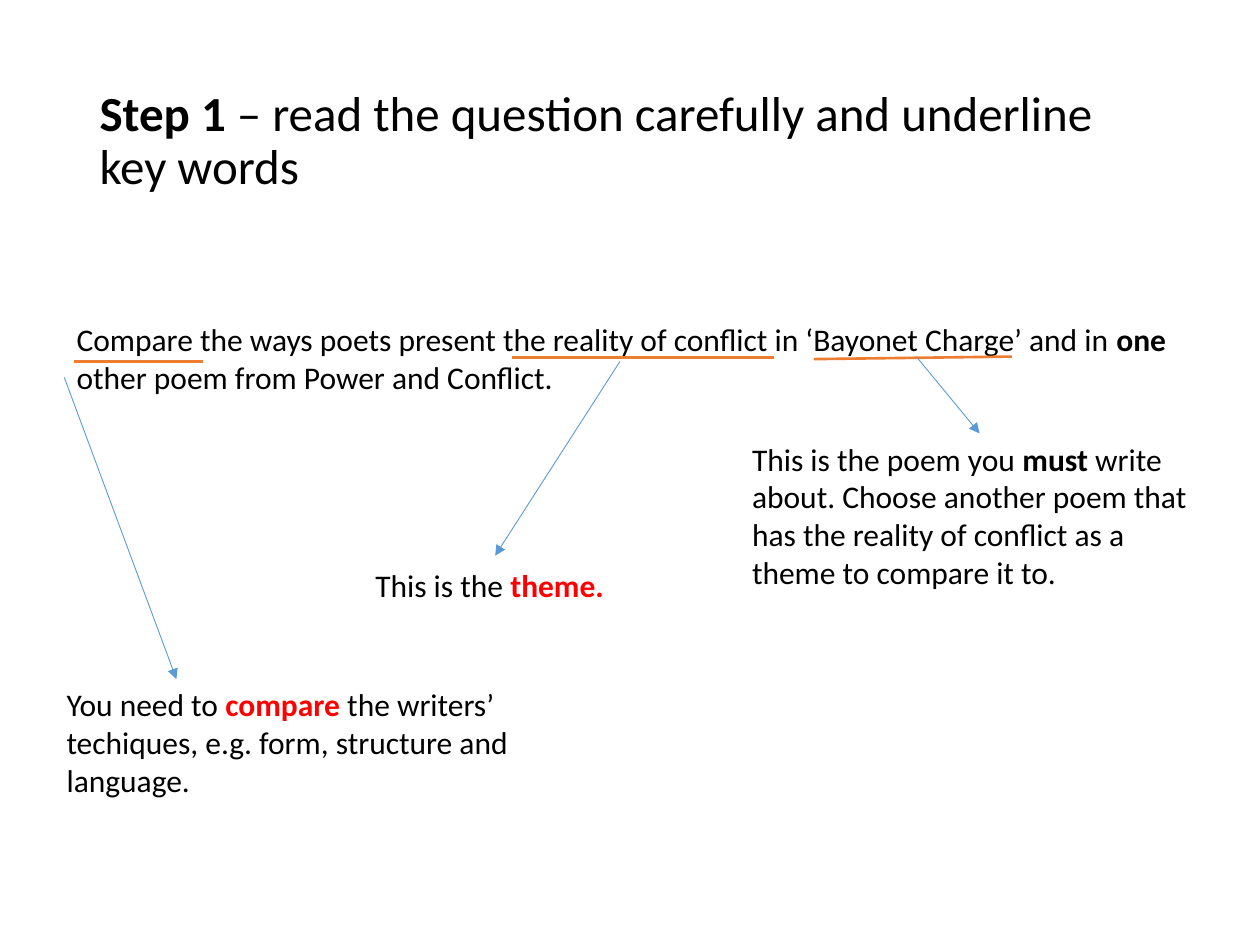
from lxml import etree
from pptx import Presentation
from pptx import util as u
from pptx.dml.color import RGBColor
from pptx.enum import shapes, text
from pptx.oxml.ns import qn

BLACK = RGBColor(0x00, 0x00, 0x00)
RED = RGBColor(0xFF, 0x00, 0x00)
ORANGE = RGBColor(0xED, 0x7D, 0x31)
BLUE = RGBColor(0x5B, 0x9B, 0xD5)
COLUMNS, ROWS = 100, 75
TOP, LEFT = 0, 1


class Lesson:
    font = "Calibri"
    title_size = 28
    body_size = 18

    def __init__(self, deck):
        self.deck = deck
        self.slide = deck.slides.add_slide(deck.slide_layouts[5])

    def x(self, columns):
        return round(self.deck.slide_width * columns / COLUMNS)

    def y(self, rows):
        return round(self.deck.slide_height * rows / ROWS)

    def box(self, left, top, width, height):
        return self.x(left), self.y(top), self.x(width), self.y(height)

    def add_pieces(self, paragraph, pieces, size):
        paragraph.alignment = text.PP_ALIGN.LEFT
        for words, bold, color in pieces:
            run = paragraph.add_run()
            run.text = words
            run.font.name = self.font
            run.font.size = u.Pt(size)
            run.font.bold = bold
            run.font.color.rgb = color

    def title(self, area, pieces):
        heading = self.slide.shapes.title
        heading.left, heading.top, heading.width, heading.height = self.box(*area)
        frame = heading.text_frame
        frame.word_wrap = True
        frame.auto_size = text.MSO_AUTO_SIZE.NONE
        frame.vertical_anchor = text.MSO_ANCHOR.MIDDLE
        frame.paragraphs[0].line_spacing = 0.9
        self.add_pieces(frame.paragraphs[0], pieces, self.title_size)

    def note(self, area, pieces):
        note = self.slide.shapes.add_textbox(*self.box(*area))
        note.text_frame.word_wrap = True
        note.text_frame.auto_size = text.MSO_AUTO_SIZE.SHAPE_TO_FIT_TEXT
        self.add_pieces(note.text_frame.paragraphs[0], pieces, self.body_size)
        return note

    def line(self, start, end, color, weight):
        line = self.slide.shapes.add_connector(
            shapes.MSO_CONNECTOR.STRAIGHT,
            self.x(start[0]), self.y(start[1]), self.x(end[0]), self.y(end[1]))
        line.line.color.rgb = color
        line.line.width = u.Pt(weight)
        etree.SubElement(line._element.spPr, qn("a:effectLst"))
        return line

    def underline(self, start, end):
        return self.line(start, end, ORANGE, 1.5)

    def arrow(self, start, end):
        arrow = self.line(start, end, BLUE, 0.5)
        outline = arrow._element.spPr.find(qn("a:ln"))
        etree.SubElement(outline, qn("a:tailEnd"), type="triangle")
        return arrow


def main():
    deck = Presentation()
    deck.slide_width, deck.slide_height = u.Inches(10), u.Inches(7.5)
    lesson = Lesson(deck)

    question = lesson.note((5.1, 24.9, 91.7, 10.1), [
        ("Compare the ways poets present the reality of conflict in ‘Bayonet Charge’ and in ",
         False, BLACK),
        ("one", True, BLACK),
        (" other poem from Power and Conflict.", False, BLACK)])
    lesson.title((6.9, 4, 86.2, 14.5), [
        ("Step 1 ", True, BLACK),
        ("– read the question carefully and underline key words", False, BLACK)])
    lesson.note((28.8, 44.4, 27.1, 4), [
        ("This is the ", False, BLACK),
        ("theme.", True, RED)])
    poem = lesson.note((58.7, 34.4, 38.1, 13.1), [
        ("This is the poem you ", False, BLACK),
        ("must", True, BLACK),
        (" write about. Choose another poem that has the reality of conflict "
         "as a theme to compare it to.", False, BLACK)])
    lesson.note((4.3, 53.9, 38.8, 10.1), [
        ("You need to ", False, BLACK),
        ("compare", True, RED),
        (" the writers’ techiques, e.g. form, structure and language.", False, BLACK)])

    lesson.underline((5.9, 28.7), (16.1, 28.7))
    lesson.underline((40.6, 28.4), (61.4, 28.4))
    lesson.underline((64.6, 28.5), (80.3, 28.3))

    lesson.arrow((49.2, 28.7), (39.3, 44.1))
    lesson.arrow((72.8, 28.4), (77.7, 34.4)).end_connect(poem, TOP)
    lesson.arrow((5.1, 30), (14, 53.9)).begin_connect(question, LEFT)

    deck.save("out.pptx")


if __name__ == "__main__":
    main()
